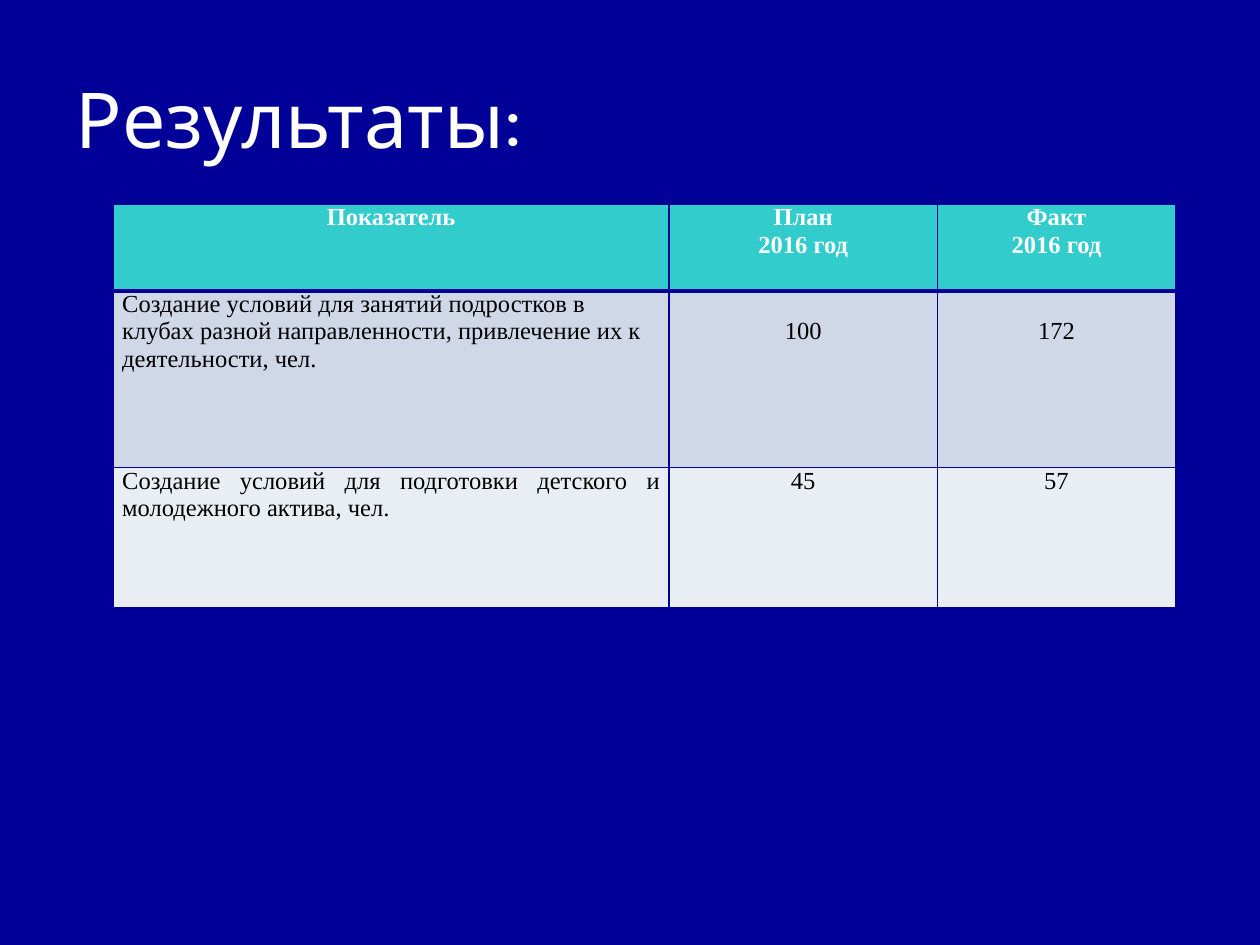
from lxml.etree import SubElement
from pptx import Presentation
from pptx.dml.color import RGBColor
from pptx.enum.text import MSO_ANCHOR, MSO_AUTO_SIZE, PP_ALIGN
from pptx.oxml.ns import qn
from pptx.util import Inches, Pt

NAVY = RGBColor(0x00, 0x00, 0x99)
TEAL = RGBColor(0x33, 0xCC, 0xCC)
BLUE = RGBColor(0xD0, 0xD8, 0xE8)
PALE = RGBColor(0xE9, 0xED, 0xF4)
WHITE = RGBColor(0xFF, 0xFF, 0xFF)
BLACK = RGBColor(0x00, 0x00, 0x00)
LEFT, MID, JUST = PP_ALIGN.LEFT, PP_ALIGN.CENTER, PP_ALIGN.JUSTIFY


def write(frame, text, size=14, face="Times New Roman", color=BLACK,
          bold=False, align=MID):
    frame.text = text
    for para in frame.paragraphs:
        para.alignment = align
        font = para.runs[0].font
        font.size, font.name, font.bold = Pt(size), face, bold
        font.color.rgb = color


def border(cell, **widths):
    """Draw navy cell borders; keys L, R, T, B give widths in points."""
    props = cell._tc.get_or_add_tcPr()
    for side, width in widths.items():
        line = SubElement(props, qn(f"a:ln{side}"), w=str(Pt(width)))
        fill = SubElement(line, qn("a:solidFill"))
        SubElement(fill, qn("a:srgbClr"), val=str(NAVY))


deck = Presentation()
deck.slide_width, deck.slide_height = Inches(10), Inches(7.5)
slide = deck.slides.add_slide(deck.slide_layouts[5])
slide.background.fill.solid()
slide.background.fill.fore_color.rgb = NAVY

title = slide.shapes.title
title.left, title.top = Inches(0.5), Inches(0.32)
title.width, title.height = Inches(9), Inches(1.23)
frame = title.text_frame
frame.auto_size = MSO_AUTO_SIZE.NONE
frame.vertical_anchor = MSO_ANCHOR.MIDDLE
write(frame, "Результаты:", size=44, face="Karla", color=WHITE, align=LEFT)

rows = [
    ["Показатель", "План\n2016 год", "Факт\n2016 год"],
    ["Создание условий для занятий подростков в клубах разной "
     "направленности, привлечение их к деятельности, чел.", "100", "172"],
    ["Создание условий для подготовки детского и молодежного актива, чел.",
     "45", "57"],
]
fills = [TEAL, BLUE, PALE]
aligns = [MID, LEFT, JUST]
widths = [4.41, 2.13, 1.89]
heights = [0.69, 1.4, 1.11]

table = slide.shapes.add_table(
    len(rows), len(widths), Inches(0.9), Inches(1.62),
    Inches(sum(widths)), Inches(sum(heights))).table
for col, width in zip(table.columns, widths):
    col.width = Inches(width)
for row, height in zip(table.rows, heights):
    row.height = Inches(height)

for r, texts in enumerate(rows):
    head = r == 0
    for c, text in enumerate(texts):
        cell = table.cell(r, c)
        cell.margin_left = cell.margin_right = Inches(0.07)
        # The first figures sit level with the second line of their label
        cell.margin_top = Inches(0.21 if r == 1 and c else 0)
        cell.margin_bottom = 0
        border(cell, L=1, R=1, T=3 if r == 1 else 1, B=3 if head else 1)
        cell.fill.solid()
        cell.fill.fore_color.rgb = fills[r]
        write(cell.text_frame, text, color=WHITE if head else BLACK,
              bold=head, align=MID if c else aligns[r])

deck.save("out.pptx")
